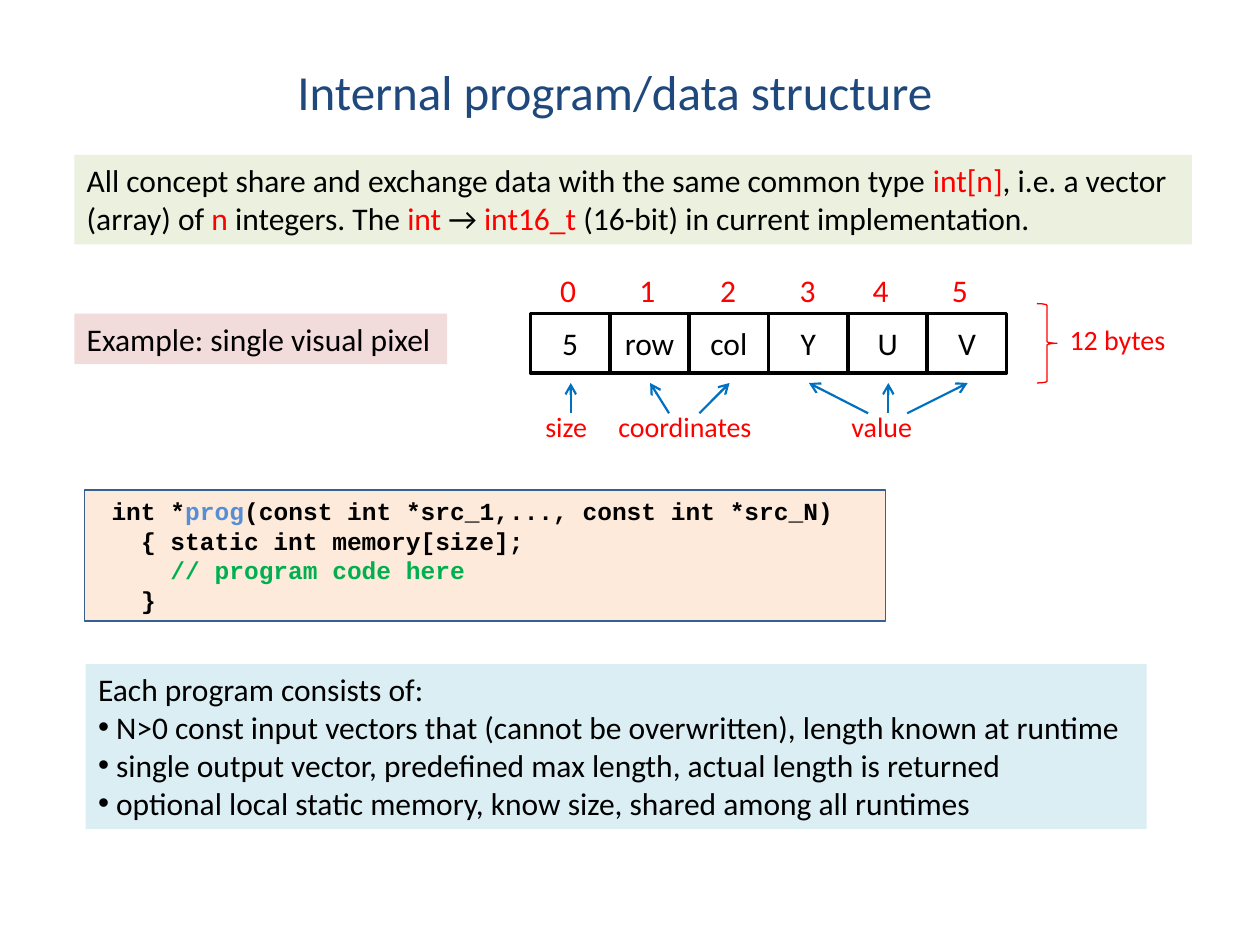
from lxml import etree
from pptx import Presentation, util as u
from pptx.dml.color import RGBColor
from pptx.enum import shapes, text
from pptx.oxml.ns import qn

BLACK = RGBColor(0, 0, 0)
WHITE = RGBColor(255, 255, 255)
RED = RGBColor(255, 0, 0)
NAVY = RGBColor(0x1F, 0x49, 0x7D)
BLUE = RGBColor(0x00, 0x70, 0xC0)
EDGE = RGBColor(0x37, 0x60, 0x92)
NAME = RGBColor(0x55, 0x8E, 0xD5)
GREEN = RGBColor(0x00, 0xB0, 0x50)
OLIVE = RGBColor(0xEB, 0xF1, 0xDE)
PINK = RGBColor(0xF2, 0xDC, 0xDB)
PEACH = RGBColor(0xFD, 0xEA, 0xDA)
AQUA = RGBColor(0xDB, 0xEE, 0xF4)

COLS, ROWS = 100, 75
UNIT = u.Inches(10) // COLS
CELL_X, CELL_Y, CELL_W, CELL_H = 42.1, 24.9, 6.3, 4.7
ARROW_TOP, ARROW_BOTTOM = 30.4, 32.8
CODE_CHAR = 1.17
BULLET_INDENT = 1.43

BODY = {"name": "Calibri", "size": u.Pt(18)}
LABEL = {"name": "Calibri", "size": u.Pt(16)}
TITLE = {"name": "Calibri", "size": u.Pt(28)}
CODE = {"name": "Courier New", "size": u.Pt(14), "bold": True}


def grid(*cells):
    return [round(c * UNIT) for c in cells]


def set_attrs(obj, values):
    for key, value in values.items():
        setattr(obj, key, value)


def add_runs(p, runs, font):
    for words, color in runs:
        for i, line in enumerate(words.split("\n")):
            if i:
                p.add_line_break()
            r = p.add_run()
            r.text = line
            set_attrs(r.font, font)
            r.font.color.rgb = color


def write(sp, paragraphs, font, align=text.PP_ALIGN.LEFT, anchor=text.MSO_ANCHOR.TOP):
    tf = sp.text_frame
    set_attrs(tf, {"word_wrap": True, "vertical_anchor": anchor})
    for i, runs in enumerate(paragraphs):
        p = tf.add_paragraph() if i else tf.paragraphs[0]
        p.alignment = align
        add_runs(p, runs, font)
    return tf.paragraphs


def add_label(s, box, runs, font, align=text.PP_ALIGN.LEFT):
    return write(s.shapes.add_textbox(*grid(*box)), [runs], font, align)[0]


def add_shape(s, kind, box, fill=None, line=None, width=0.75):
    sp = s.shapes.add_shape(kind, *grid(*box))
    sp.shadow.inherit = False
    if fill is None:
        sp.fill.background()
    else:
        sp.fill.solid()
        sp.fill.fore_color.rgb = fill
    if line is None:
        sp.line.fill.background()
    else:
        sp.line.color.rgb = line
        sp.line.width = u.Pt(width)
    return sp


def add_panel(s, box, fill, paragraphs, font, line=None):
    sp = add_shape(s, shapes.MSO_SHAPE.RECTANGLE, box, fill, line)
    return write(sp, paragraphs, font)


def add_cells(s, words):
    for i, word in enumerate(words):
        box = CELL_X + i * CELL_W, CELL_Y, CELL_W, CELL_H
        sp = add_shape(s, shapes.MSO_SHAPE.RECTANGLE, box, WHITE, BLACK, 2)
        set_attrs(sp.text_frame, {"margin_left": 0, "margin_right": 0})
        write(sp, [[(word, BLACK)]], BODY, text.PP_ALIGN.CENTER, text.MSO_ANCHOR.MIDDLE)


def add_arrow(s, x1, x2):
    ends = grid(x1, ARROW_BOTTOM, x2, ARROW_TOP)
    c = s.shapes.add_connector(shapes.MSO_CONNECTOR.STRAIGHT, *ends)
    c.line.color.rgb = BLUE
    c.line.width = u.Pt(1.25)
    etree.SubElement(c.line._get_or_add_ln(), qn("a:tailEnd"), type="arrow")
    etree.SubElement(c._element.spPr, qn("a:effectLst"))


def indent(p, left, hanging=0):
    pPr = p._p.get_or_add_pPr()
    pPr.set("marL", str(grid(left)[0]))
    pPr.set("indent", str(-grid(hanging)[0]))
    return pPr


def add_bullet(p):
    pPr = indent(p, BULLET_INDENT, BULLET_INDENT)
    etree.SubElement(pPr, qn("a:buFont"), typeface="Arial")
    etree.SubElement(pPr, qn("a:buChar"), char="•")


def add_tabs(p, stops, align):
    tabs = etree.SubElement(p._p.get_or_add_pPr(), qn("a:tabLst"))
    for stop in grid(*stops):
        etree.SubElement(tabs, qn("a:tab"), pos=str(stop), algn=align)


def main():
    prs = Presentation()
    prs.slide_width, prs.slide_height = grid(COLS, ROWS)
    s = prs.slides.add_slide(prs.slide_layouts[6])

    add_label(s, (22.3, 4.4, 53, 5.7), [("Internal program/data structure", NAVY)],
              TITLE, text.PP_ALIGN.CENTER)

    code = add_panel(s, (6.7, 38.9, 63.6, 10.4), PEACH, [
        [("int *", BLACK), ("prog", NAME), ("(const int *src_1,..., const int *src_N)", BLACK)],
        [("{ static int memory[size];", BLACK)],
        [("// program code here", GREEN)],
        [("}", BLACK)],
    ], CODE, EDGE)
    for p, chars in zip(code, (1, 3, 5, 3)):
        indent(p, chars * CODE_CHAR)

    add_panel(s, (5.9, 12.3, 88.7, 7.1), OLIVE, [[
        ("All concept share and exchange data with the same common type ", BLACK),
        ("int[n]", RED), (", i.e. a vector\n(array) of ", BLACK), ("n ", RED),
        ("integers. The ", BLACK), ("int", RED), (" → ", BLACK), ("int16_t", RED),
        (" (16-bit) in current implementation.", BLACK),
    ]], BODY)

    facts = add_panel(s, (6.8, 52.7, 84.2, 13.1), AQUA, [[(line, BLACK)] for line in (
        "Each program consists of:",
        "N>0 const input vectors that (cannot be overwritten), length known at runtime",
        "single output vector, predefined max length, actual length is returned",
        "optional local static memory, know size, shared among all runtimes",
    )], BODY)
    for p in facts[1:]:
        add_bullet(p)

    add_panel(s, (5.9, 24.9, 29.6, 4), PINK, [[("Example: single visual pixel", BLACK)]], BODY)

    add_cells(s, ("5", "row", "col", "Y", "U", "V"))
    p = add_label(s, (42.9, 21, 36.2, 4), [("\t0\t1\t2\t3\t4\t5", RED)], BODY)
    add_tabs(p, (1.2, 7.5, 13.9, 20.2, 26, 32.3), "ctr")
    p = add_label(s, (42.3, 32, 37.6, 3.7), [("size\tcoordinates\tvalue", RED)], LABEL)
    add_tabs(p, (5.8, 24.3), "l")

    for x1, x2 in ((45.3, 45.3), (53.1, 51.6), (55.5, 57.9),
                   (70.5, 70.5), (72, 76.8), (68.9, 64.2)):
        add_arrow(s, x1, x2)

    add_shape(s, shapes.MSO_SHAPE.RIGHT_BRACE, (82.3, 24.1, 1.6, 6.3), line=RED)
    add_label(s, (83.9, 25.1, 10.2, 3.7), [("12 bytes", RED)], LABEL)
    prs.save("out.pptx")


if __name__ == "__main__":
    main()
